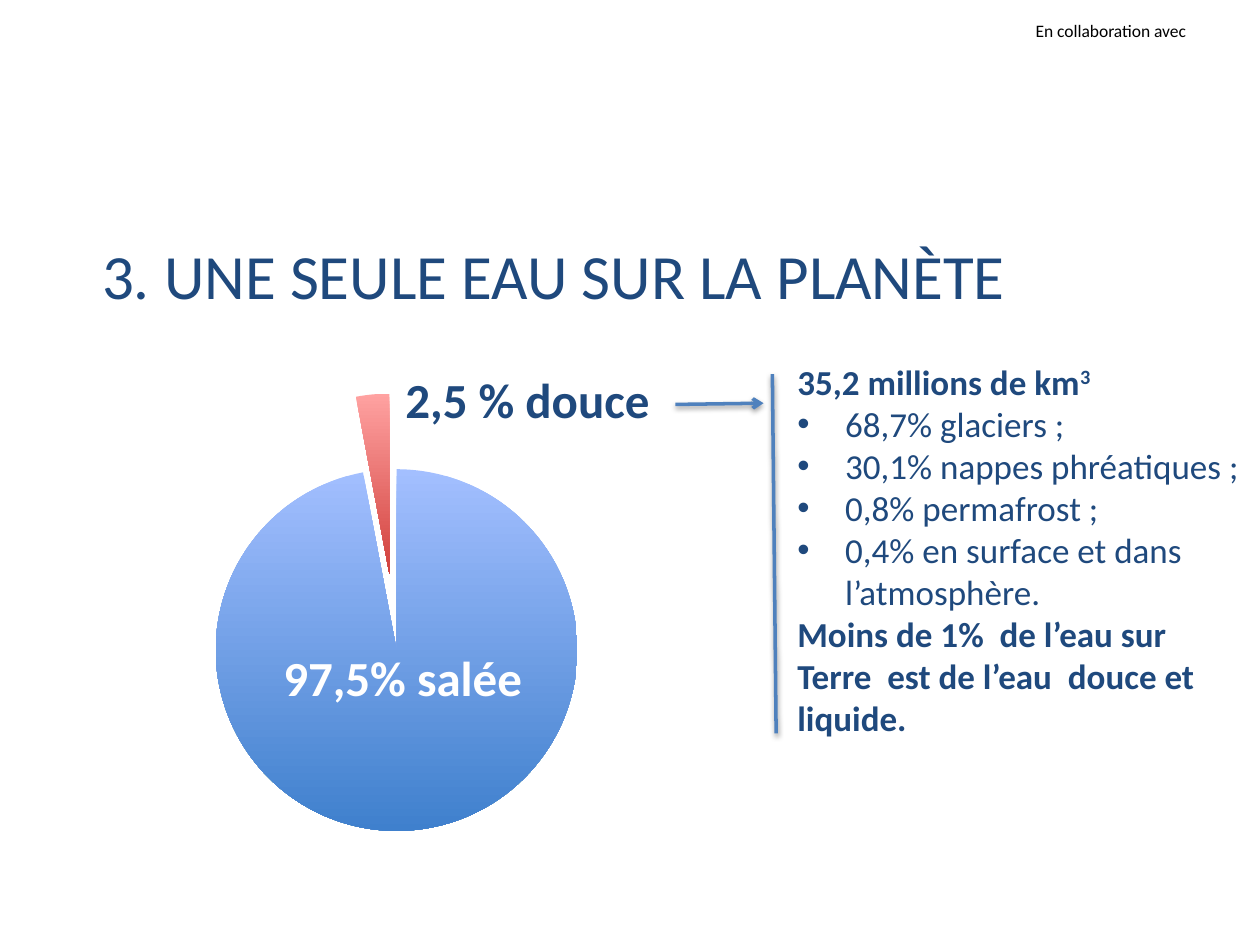
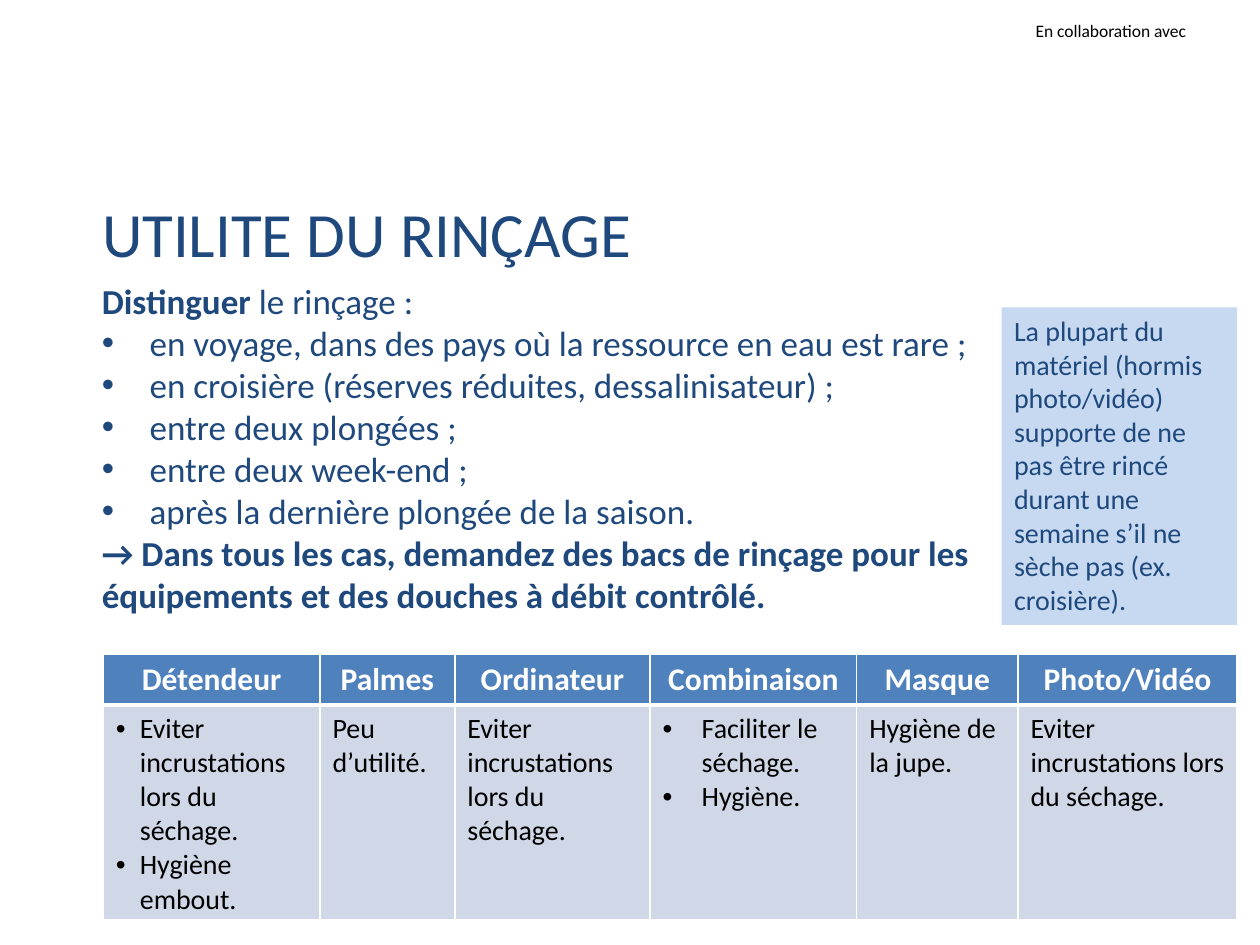
from dataclasses import dataclass

from lxml import etree
from pptx import Presentation
from pptx import util as u
from pptx.chart import data as chart_data
from pptx.dml import color
from pptx.enum import chart as charts, shapes, text
from pptx.oxml import ns, parse_xml

PX = 9144


@dataclass(frozen=True)
class Theme:
    font: str = "Calibri"
    navy: str = "1F497D"
    blue: str = "4F81BD"
    pale_blue: str = "C6D9F1"
    row_blue: str = "D0D8E8"
    white: str = "FFFFFF"
    black: str = "000000"
    salt_gradient: tuple = ("A3BFFF", "3F80CD")
    fresh_gradient: tuple = ("FFA2A1", "D1403C")
    title: int = 36
    label: int = 28
    body: int = 20
    header: int = 18
    note: int = 16
    credit: int = 10


THEME = Theme()


def px(*lengths):
    return [u.Emu(length * PX) for length in lengths]


def rgb(value):
    return color.RGBColor.from_string(value)


def set_all(target, values):
    for name, value in values.items():
        setattr(target, name, value)


def child(parent, tag, **attributes):
    element = etree.SubElement(parent, ns.qn(tag))
    for name, value in attributes.items():
        element.set(name, str(value))
    return element


def add_run(paragraph, words, size, colour, bold=False, raised=False):
    run = paragraph.add_run()
    run.text = words
    set_all(run.font, {"name": THEME.font, "size": u.Pt(size), "bold": bold})
    run.font.color.rgb = rgb(colour)
    if raised:
        run.font._element.set("baseline", "30000")


def add_bullet(paragraph, indent):
    properties = paragraph._p.get_or_add_pPr()
    properties.set("marL", str(indent * PX))
    properties.set("indent", str(-indent * PX))
    child(properties, "a:buFont", typeface="Arial")
    child(properties, "a:buChar", char="•")


def plain(words, **style):
    return 0, [(words, style)]


def bullets(indent, *items):
    return [(indent, [(item, {})]) for item in items]


def write(frame, paragraphs, size, colour, bold=False, align=text.PP_ALIGN.LEFT):
    for index, (indent, runs) in enumerate(paragraphs):
        paragraph = frame.add_paragraph() if index else frame.paragraphs[0]
        if indent:
            add_bullet(paragraph, indent)
        set_all(paragraph, {"alignment": align, "space_before": u.Pt(0)})
        for words, style in runs:
            add_run(paragraph, words, size, colour, **{"bold": bold, **style})


def add_text(slide, box, paragraphs, size, colour=THEME.navy, wrap=True, bold=False):
    shape = slide.shapes.add_textbox(*px(*box))
    set_all(shape.text_frame, {"word_wrap": wrap,
                               "auto_size": text.MSO_AUTO_SIZE.SHAPE_TO_FIT_TEXT})
    write(shape.text_frame, paragraphs, size, colour, bold)
    return shape


def add_note(slide, box, words):
    shape = slide.shapes.add_shape(shapes.MSO_SHAPE.RECTANGLE, *px(*box))
    shape.shadow.inherit = False
    shape.fill.solid()
    shape.fill.fore_color.rgb = rgb(THEME.pale_blue)
    shape.line.fill.background()
    shape.text_frame.vertical_anchor = text.MSO_ANCHOR.TOP
    write(shape.text_frame, [plain(words)], THEME.note, THEME.navy)


def add_title_slide(presentation, words, top):
    slide = presentation.slides.add_slide(presentation.slide_layouts.get_by_name("Title Only"))
    title = slide.shapes.title
    left, top, width, height = px(71, top, 929, 71)
    set_all(title, {"left": left, "top": top, "width": width, "height": height})
    set_all(title.text_frame, {"word_wrap": True, "vertical_anchor": text.MSO_ANCHOR.TOP,
                               "auto_size": text.MSO_AUTO_SIZE.NONE})
    write(title.text_frame, [plain(words)], THEME.title, THEME.navy)
    return slide


def add_layout_credit(slide):
    credit = add_text(slide, (812, 11, 142, 27), [plain("En collaboration avec")],
                      THEME.credit, THEME.black, wrap=False)
    slide.slide_layout.element.cSld.spTree.append(credit._element)


def add_line(slide, start, end, arrow=False):
    connector = slide.shapes.add_connector(shapes.MSO_CONNECTOR.STRAIGHT, *px(*start, *end))
    connector.line.color.rgb = rgb(THEME.blue)
    connector.line.width = u.Pt(2)
    if arrow:
        child(connector.line._get_or_add_ln(), "a:tailEnd", type="arrow")
    effects = child(connector._element.spPr, "a:effectLst")
    shadow = child(effects, "a:outerShdw", blurRad=u.Pt(3.1), dist=u.Pt(1.6),
                   dir=5400000, rotWithShape=0)
    child(child(shadow, "a:srgbClr", val=THEME.black), "a:alpha", val=38000)


def add_water_pie(slide, box):
    data = chart_data.CategoryChartData()
    data.categories = ["1", "2"]
    data.add_series("Series 1", (98, 3))
    chart = slide.shapes.add_chart(charts.XL_CHART_TYPE.PIE, *px(*box), data).chart
    set_all(chart, {"has_legend": False, "has_title": False})
    set_all(chart.font, {"name": THEME.font, "size": u.Pt(THEME.header)})
    chart.font.color.rgb = rgb(THEME.black)
    plot = chart.plots[0]
    plot.vary_by_categories = True
    series = plot.series[0]
    for index, colours in enumerate((THEME.salt_gradient, THEME.fresh_gradient)):
        fill = series.points[index].format.fill
        fill.gradient()
        fill.gradient_angle = 270
        for stop, colour in zip(fill.gradient_stops, colours):
            stop.color.rgb = rgb(colour)
    explosion = parse_xml(f'<c:explosion {ns.nsdecls("c")} val="21"/>')
    series._element.find(ns.qn("c:dPt")).addprevious(explosion)
    place_plot(chart, {"x": 0.24, "y": 0.04, "w": 0.52, "h": 0.92})


def place_plot(chart, fractions):
    area = chart._chartSpace.chart.plotArea
    for existing in area.findall(ns.qn("c:layout")):
        area.remove(existing)
    layout = etree.Element(ns.qn("c:layout"))
    area.insert(0, layout)
    manual = child(layout, "c:manualLayout")
    child(manual, "c:layoutTarget", val="inner")
    for axis in "xy":
        child(manual, f"c:{axis}Mode", val="edge")
    for name, value in fractions.items():
        child(manual, f"c:{name}", val=value)


def fill_cell(cell, fill, paragraphs, bottom_width, **style):
    write(cell.text_frame, paragraphs, **style)
    properties = cell._tc.get_or_add_tcPr()
    for side in "LRTB":
        width = bottom_width if side == "B" else 1
        border = child(properties, f"a:ln{side}", w=u.Pt(width))
        child(child(border, "a:solidFill"), "a:srgbClr", val=THEME.white)
    cell.fill.solid()
    cell.fill.fore_color.rgb = rgb(fill)


def add_equipment_table(slide, left, top, columns, heights):
    frame = slide.shapes.add_table(2, len(columns), *px(
        left, top, sum(width for width, _, _ in columns), sum(heights)))
    table = frame.table
    for row, height in zip(table.rows, heights):
        row.height = px(height)[0]
    for index, (width, heading, paragraphs) in enumerate(columns):
        table.columns[index].width = px(width)[0]
        fill_cell(table.cell(0, index), THEME.blue, [plain(heading)], 3, size=THEME.header,
                  colour=THEME.white, bold=True, align=text.PP_ALIGN.CENTER)
        body = table.cell(1, index)
        body.margin_bottom = px(2)[0]
        fill_cell(body, THEME.row_blue, paragraphs, 1, size=THEME.note, colour=THEME.black)


def build_water_slide(presentation):
    slide = add_title_slide(presentation, "3. UNE SEULE EAU SUR LA PLANÈTE", 183)
    add_layout_credit(slide)
    add_text(slide, (623, 281, 372, 313), [
        (0, [("35,2 millions de km", {"bold": True}), ("3", {"bold": True, "raised": True})]),
        *bullets(38, "68,7% glaciers ;", "30,1% nappes phréatiques ;", "0,8% permafrost ;",
                 "0,4% en surface et dans l’atmosphère."),
        plain("Moins de 1%  de l’eau sur Terre  est de l’eau  douce et liquide.", bold=True),
    ], THEME.body)
    add_water_pie(slide, (-22, 297, 668, 378))
    add_text(slide, (215, 509, 212, 57), [plain("97,5% salée")], THEME.label,
             THEME.white, wrap=False, bold=True)
    add_text(slide, (312, 288, 216, 57), [plain("2,5 % douce")], THEME.label,
             wrap=False, bold=True)
    add_line(slide, (613, 297), (616, 582))
    add_line(slide, (536, 321), (606, 320), arrow=True)


def build_rinsing_slide(presentation):
    slide = add_title_slide(presentation, "UTILITE DU RINÇAGE", 149)
    avoid_crust = "Eviter incrustations lors du séchage."
    add_equipment_table(slide, 82, 519, [
        (172, "Détendeur", bullets(19, avoid_crust, "Hygiène embout.")),
        (107, "Palmes", [plain("Peu d’utilité.")]),
        (155, "Ordinateur", [plain(avoid_crust)]),
        (164, "Combinaison", bullets(31, "Faciliter le séchage.", "Hygiène.")),
        (128, "Masque", [plain("Hygiène de la jupe.")]),
        (174, "Photo/Vidéo", [plain(avoid_crust)]),
    ], (40, 169))
    add_text(slide, (71, 217, 733, 279), [
        (0, [("Distinguer", {"bold": True}), (" le rinçage :", {})]),
        *bullets(38, "en voyage, dans des pays où la ressource en eau est rare ;",
                 "en croisière (réserves réduites, dessalinisateur) ;",
                 "entre deux plongées ;", "entre deux week-end ;",
                 "après la dernière plongée de la saison."),
        plain("→ Dans tous les cas, demandez des bacs de rinçage pour les équipements "
              "et des douches à débit contrôlé.", bold=True),
    ], THEME.body)
    add_note(slide, (795, 244, 187, 252),
             "La plupart du matériel (hormis photo/vidéo) supporte de ne pas être rincé "
             "durant une semaine s’il ne sèche pas (ex. croisière).")


def main():
    presentation = Presentation()
    width, height = px(1000, 750)
    set_all(presentation, {"slide_width": width, "slide_height": height})
    build_water_slide(presentation)
    build_rinsing_slide(presentation)
    presentation.save("out.pptx")


if __name__ == "__main__":
    main()
